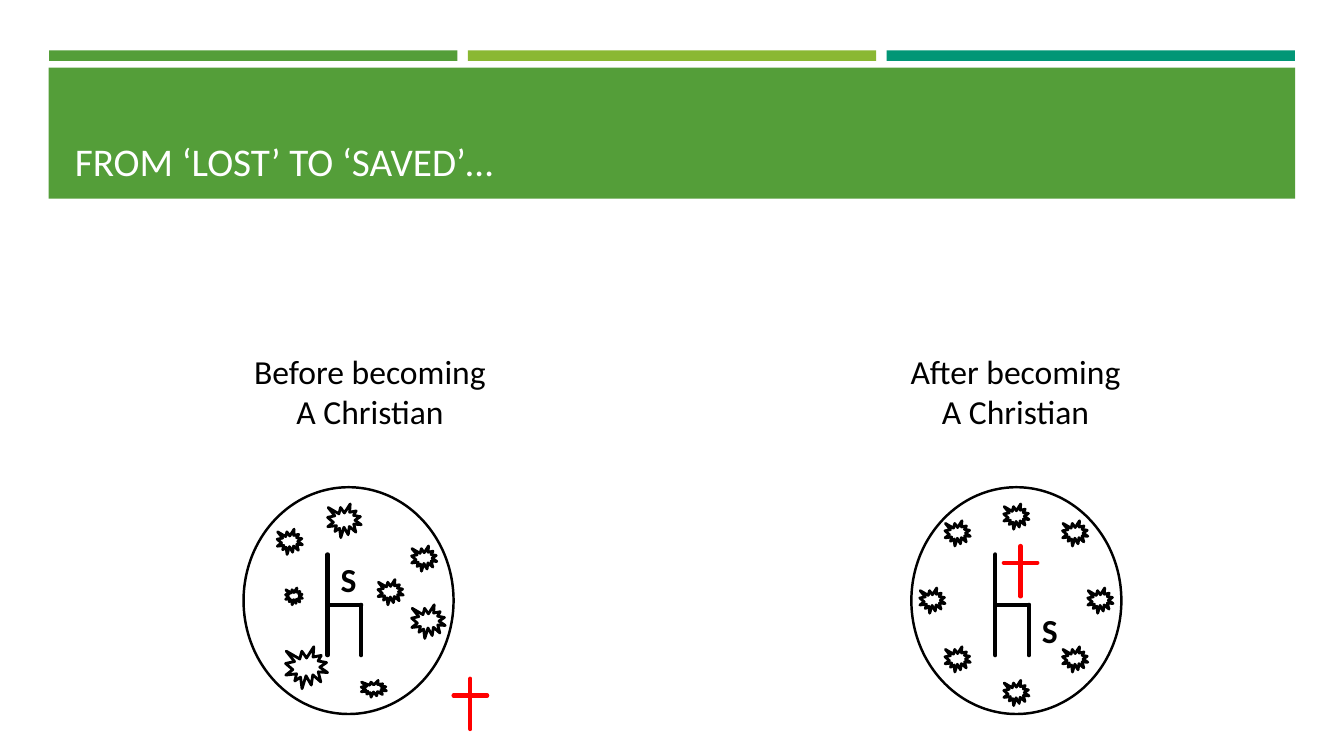
"""Build the 'lost to saved' slide on a grid of 160 columns by 90 rows."""
from dataclasses import dataclass

from lxml import etree
from pptx import Presentation
from pptx import util as u
from pptx.dml.color import RGBColor
from pptx.enum import shapes, text
from pptx.oxml.ns import qn

COLUMNS, ROWS = 160, 90
CELL = u.Inches(7.5) // ROWS
FONT = "Calibri"
BLACK = RGBColor(0x00, 0x00, 0x00)
WHITE = RGBColor(0xFF, 0xFF, 0xFF)
RED = RGBColor(0xFF, 0x00, 0x00)
GREEN = RGBColor(0x54, 0x9E, 0x39)
LIME = RGBColor(0x8A, 0xB8, 0x33)
TEAL = RGBColor(0x02, 0x96, 0x76)
SHAPE = shapes.MSO_SHAPE


@dataclass(frozen=True)
class Area:
    """A rectangle in grid columns and rows."""
    column: float
    row: float
    width: float
    height: float

    def lengths(self) -> list[u.Emu]:
        """Return left, top, width and height as slide lengths."""
        return [grid(n) for n in (self.column, self.row, self.width, self.height)]

    def within(self, column: float, row: float) -> "Area":
        """Return this area shifted by an origin."""
        return Area(column + self.column, row + self.row, self.width, self.height)


@dataclass(frozen=True)
class Life:
    """One circle, with places relative to its top left corner."""
    column: float
    caption: str
    caption_area: Area
    cross: tuple[float, float]
    self_area: Area
    bursts: tuple[Area, ...]


CIRCLE_ROW = 58
CIRCLE = Area(0, 0, 25, 27)
CHAIR = ((10, 8, 10, 20), (10, 14, 14, 14), (14, 14, 14, 20))
CROSS = ((0, 0, 0, 6), (-2, 2, 2, 2))
BARS = (GREEN, LIME, TEAL)
BAND = Area(5.8, 8.05, 148.4, 15.6)
TITLE = Area(7.7, 9.25, 144.7, 13.3)

LIVES = (
    Life(29, "Before becoming", Area(29, 41.2, 30.1, 10.9), (27, 22.8),
         Area(10, 8, 5, 6),
         (Area(4, 5, 3, 3), Area(14, 23, 3, 2), Area(5, 19, 5, 5),
          Area(10, 2, 4, 4), Area(5, 12, 2, 2), Area(20, 14, 4, 4),
          Area(16, 11, 3, 3), Area(20, 7, 3, 3))),
    Life(108.5, "After becoming", Area(107, 41.2, 27.8, 10.9), (13, 7),
         Area(14, 14, 5, 6),
         tuple(Area(column, row, 3, 3) for column, row in (
             (11, 2), (18, 4), (4, 4), (4, 19),
             (18, 19), (21, 12), (1, 12), (11, 23)))),
)


def grid(cells: float) -> u.Emu:
    """Turn a count of grid cells into a length."""
    return u.Emu(round(cells * CELL))


def apply(target, **values) -> None:
    """Set each format value on the target."""
    for name, value in values.items():
        setattr(target, name, value)


def add_figure(page, kind, area: Area, fill: RGBColor | None = None,
               line: float = 0) -> None:
    """Draw a preset shape with an optional fill and black outline."""
    figure = page.shapes.add_shape(kind, *area.lengths())
    figure.shadow.inherit = False
    if fill is None:
        figure.fill.background()
    else:
        figure.fill.solid()
        figure.fill.fore_color.rgb = fill
    if line:
        figure.line.color.rgb = BLACK
        figure.line.width = u.Pt(line)
    else:
        figure.line.fill.background()


def add_strokes(page, strokes, column: float, row: float, color: RGBColor) -> None:
    """Draw round-ended lines from an origin on the grid."""
    for left, top, right, bottom in strokes:
        stroke = page.shapes.add_connector(
            shapes.MSO_CONNECTOR.STRAIGHT, grid(column + left), grid(row + top),
            grid(column + right), grid(row + bottom))
        stroke.line.color.rgb = color
        stroke.line.width = u.Pt(3)
        stroke.line._get_or_add_ln().set("cap", "rnd")
        etree.SubElement(stroke._element.spPr, qn("a:effectLst"))


def write(box, lines: tuple[str, ...], align, wrap: bool = True, **font) -> None:
    """Fill a box with paragraphs of one format."""
    frame = box.text_frame
    frame.word_wrap = wrap
    frame.text = "\n".join(lines)
    for para in frame.paragraphs:
        para.alignment = align
        for span in para.runs:
            color = font.get("color", BLACK)
            span.font.color.rgb = color
            apply(span.font, name=FONT, size=u.Pt(font.get("size", 24)),
                  bold=font.get("bold", False))


def add_header(page) -> None:
    """Draw the coloured bars and the title on its band."""
    for index, color in enumerate(BARS):
        add_figure(page, SHAPE.RECTANGLE, Area(5.85 + 49.85 * index, 6, 48.6, 1.25), color)
    add_figure(page, SHAPE.RECTANGLE, BAND, GREEN)
    title = page.shapes.title
    title._element.getparent().append(title._element)
    apply(title, **dict(zip(("left", "top", "width", "height"), TITLE.lengths())))
    write(title, ("FROM ‘LOST’ TO ‘SAVED’…",), text.PP_ALIGN.LEFT, size=28, color=WHITE)
    apply(title.text_frame, vertical_anchor=text.MSO_ANCHOR.BOTTOM,
          auto_size=text.MSO_AUTO_SIZE.NONE)


def add_life(page, life: Life) -> None:
    """Draw a circle with its chair, cross, bursts, self and caption."""
    origin = life.column, CIRCLE_ROW
    add_figure(page, SHAPE.OVAL, CIRCLE.within(*origin), line=1.75)
    add_strokes(page, CHAIR, *origin, BLACK)
    for burst in life.bursts:
        add_figure(page, SHAPE.EXPLOSION1, burst.within(*origin), WHITE, 2)
    across, down = life.cross
    add_strokes(page, CROSS, life.column + across, CIRCLE_ROW + down, RED)
    self_box = page.shapes.add_textbox(*life.self_area.within(*origin).lengths())
    write(self_box, ("S",), text.PP_ALIGN.CENTER, bold=True)
    caption = page.shapes.add_textbox(*life.caption_area.lengths())
    write(caption, (life.caption, "A Christian"), text.PP_ALIGN.CENTER, wrap=False)


def main() -> None:
    """Build and save the deck."""
    deck = Presentation()
    apply(deck, slide_width=grid(COLUMNS), slide_height=grid(ROWS))
    page = deck.slides.add_slide(deck.slide_layouts.get_by_name("Title Only"))
    add_header(page)
    for life in LIVES:
        add_life(page, life)
    deck.save("out.pptx")


if __name__ == "__main__":
    main()
